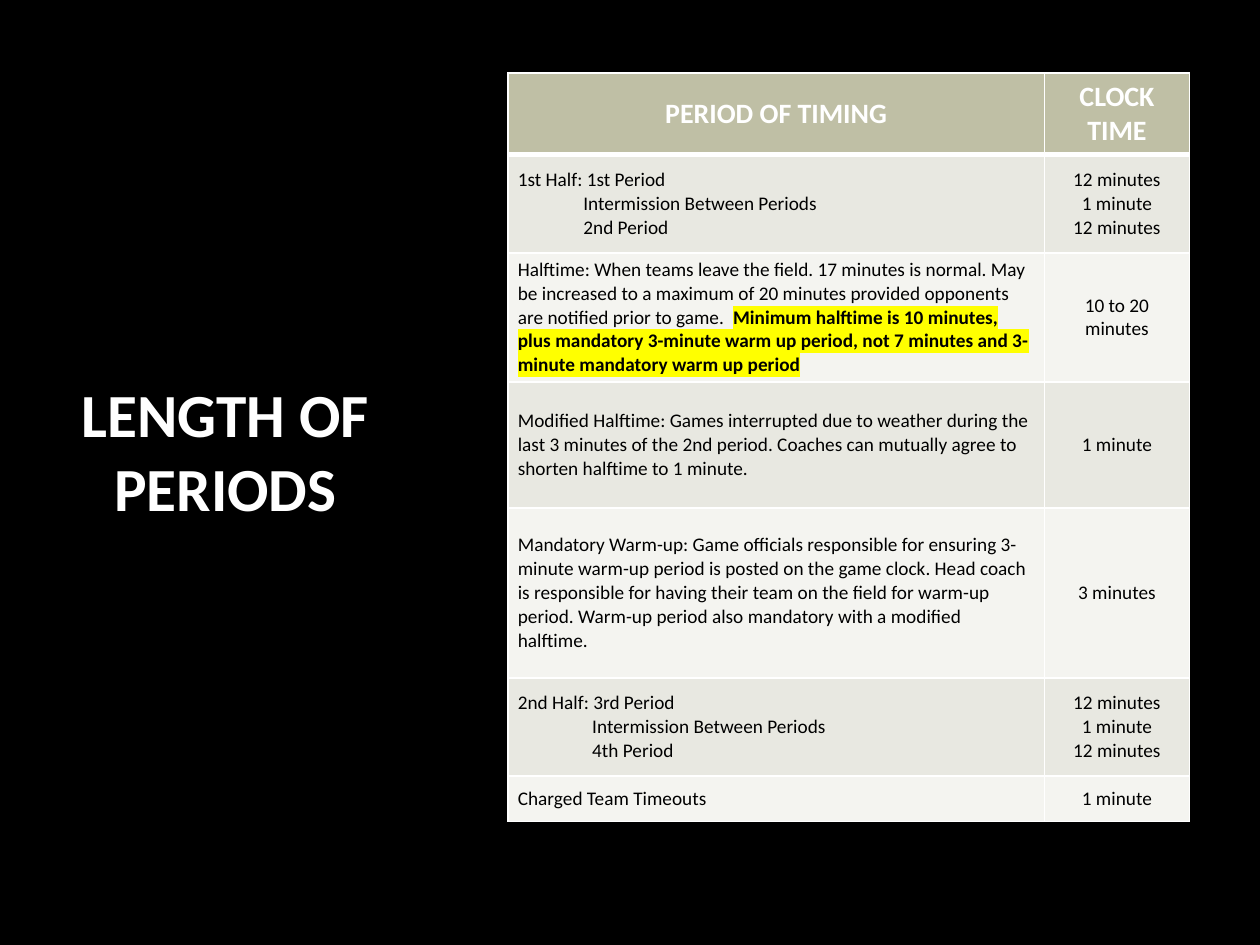
from dataclasses import dataclass

from lxml import etree
from pptx import Presentation
from pptx.dml.color import RGBColor
from pptx.enum.text import MSO_ANCHOR, MSO_AUTO_SIZE, PP_ALIGN
from pptx.oxml.ns import qn
from pptx.util import Inches, Pt

CENTER, LEFT = PP_ALIGN.CENTER, PP_ALIGN.LEFT
MIDDLE = MSO_ANCHOR.MIDDLE
NO_FIT = MSO_AUTO_SIZE.NONE
TITLE_ONLY = 5
FONT = "Calibri"
SLIDE_W, SLIDE_H = Inches(10), Inches(7.5)
COL_SHARES = (0.426, 0.115)
ROW_HEIGHTS = (0.65, 0.78, 1.02, 1, 1.35, 0.78, 0.36)
WHITE, BLACK, YELLOW = "FFFFFF", "000000", "FFFF00"
HEADER_FILL = "BFBFA5"
BAND_FILLS = ("E8E8E1", "F4F4F0")
THIN, THICK = 1, 3


@dataclass
class Run:
    text: str
    bold: bool = False
    highlight: str = ""


@dataclass
class Line:
    runs: list[Run]
    indent: float = 0


@dataclass
class Row:
    period: list[Line]
    times: list[Line]


def line(text: str, indent: float = 0, bold: bool = False) -> Line:
    return Line([Run(text, bold)], indent)


def half(name: str, first: str, second: str, indent: float) -> Row:
    return Row(
        [line(f"{name} Half: {first} Period"),
         line("Intermission Between Periods", indent),
         line(f"{second} Period", indent)],
        [line("12 minutes"), line("1 minute"), line("12 minutes")],
    )


ROWS = [
    Row([line("PERIOD OF TIMING", bold=True)], [line("CLOCK TIME", bold=True)]),
    half("1st", "1st", "2nd", 0.52),
    Row([Line([
        Run("Halftime: When teams leave the field. 17 minutes is normal. May be "
            "increased to a maximum of 20 minutes provided opponents are notified "
            "prior to game.  "),
        Run("Minimum halftime is 10 minutes, plus mandatory 3-minute warm up period, "
            "not 7 minutes and 3-minute mandatory warm up period", True, YELLOW),
    ])], [line("10 to 20 minutes")]),
    Row([line("Modified Halftime: Games interrupted due to weather during the last "
              "3 minutes of the 2nd period. Coaches can mutually agree to shorten "
              "halftime to 1 minute.")], [line("1 minute")]),
    Row([line("Mandatory Warm-up: Game officials responsible for ensuring 3-minute "
              "warm-up period is posted on the game clock. Head coach is responsible "
              "for having their team on the field for warm-up period. Warm-up period "
              "also mandatory with a modified halftime.")], [line("3 minutes")]),
    half("2nd", "3rd", "4th", 0.59),
    Row([line("Charged Team Timeouts")], [line("1 minute")]),
]


def color(value: str) -> RGBColor:
    return RGBColor.from_string(value)


def add_run(p, run: Run, size: float, ink: str):
    r = p.add_run()
    r.text = run.text
    r.font.name, r.font.size, r.font.bold = FONT, Pt(size), run.bold
    r.font.color.rgb = color(ink)
    if run.highlight:
        mark = etree.Element(qn("a:highlight"))
        etree.SubElement(mark, qn("a:srgbClr"), val=run.highlight)
        r.font._element.find(qn("a:latin")).addprevious(mark)
    return r


def set_borders(cell, top: float, bottom: float) -> None:
    tc_pr = cell._tc.get_or_add_tcPr()
    sides = {"a:lnL": THIN, "a:lnR": THIN, "a:lnT": top, "a:lnB": bottom}
    for tag, width in sides.items():
        ln = etree.SubElement(tc_pr, qn(tag), w=str(Pt(width)))
        fill = etree.SubElement(ln, qn("a:solidFill"))
        etree.SubElement(fill, qn("a:srgbClr"), val=WHITE)


def fill_cell(cell, lines: list[Line], row: int, align: PP_ALIGN) -> None:
    header = row == 0
    set_borders(cell, THICK if row == 1 else THIN, THICK if header else THIN)
    cell.fill.solid()
    cell.fill.fore_color.rgb = color(HEADER_FILL if header else BAND_FILLS[(row - 1) % 2])
    cell.vertical_anchor = MIDDLE
    cell.margin_left = cell.margin_right = Inches(0.08)
    cell.margin_top = cell.margin_bottom = Inches(0.04)
    tf = cell.text_frame
    for i, item in enumerate(lines):
        p = tf.add_paragraph() if i else tf.paragraphs[0]
        p.alignment = align
        if item.indent:
            p._p.get_or_add_pPr().set("marL", str(Inches(item.indent)))
        for run in item.runs:
            add_run(p, run, 16 if header else 11, WHITE if header else BLACK)


def add_title(s) -> None:
    sp = s.shapes.title
    sp.left, sp.top = int(SLIDE_W * 0.055), int(SLIDE_H * 0.208)
    sp.width, sp.height = int(SLIDE_W * 0.248), int(SLIDE_H * 0.536)
    tf = sp.text_frame
    tf.auto_size, tf.word_wrap, tf.vertical_anchor = NO_FIT, True, MIDDLE
    tf.margin_left = tf.margin_right = 0
    p = tf.paragraphs[0]
    p.alignment = CENTER
    r = add_run(p, Run("LENGTH OF PERIODS", True), 35, WHITE)
    r.font.fill.gradient()
    r.font.fill.gradient_angle = 270
    for stop, shade in zip(r.font.fill.gradient_stops, (WHITE, "BFBFBF")):
        stop.color.rgb = color(shade)


def add_periods_table(s) -> None:
    frame = s.shapes.add_table(
        len(ROWS), len(COL_SHARES), int(SLIDE_W * 0.403), int(SLIDE_H * 0.077),
        int(SLIDE_W * sum(COL_SHARES)), Inches(sum(ROW_HEIGHTS)))
    table = frame.table
    for column, share in zip(table.columns, COL_SHARES):
        column.width = int(SLIDE_W * share)
    for i, (row, height) in enumerate(zip(ROWS, ROW_HEIGHTS)):
        table.rows[i].height = Inches(height)
        fill_cell(table.cell(i, 0), row.period, i, LEFT if i else CENTER)
        fill_cell(table.cell(i, 1), row.times, i, CENTER)


def main() -> None:
    prs = Presentation()
    prs.slide_width, prs.slide_height = SLIDE_W, SLIDE_H
    s = prs.slides.add_slide(prs.slide_layouts[TITLE_ONLY])
    s.background.fill.solid()
    s.background.fill.fore_color.rgb = color(BLACK)
    add_title(s)
    add_periods_table(s)
    prs.save("out.pptx")


if __name__ == "__main__":
    main()
